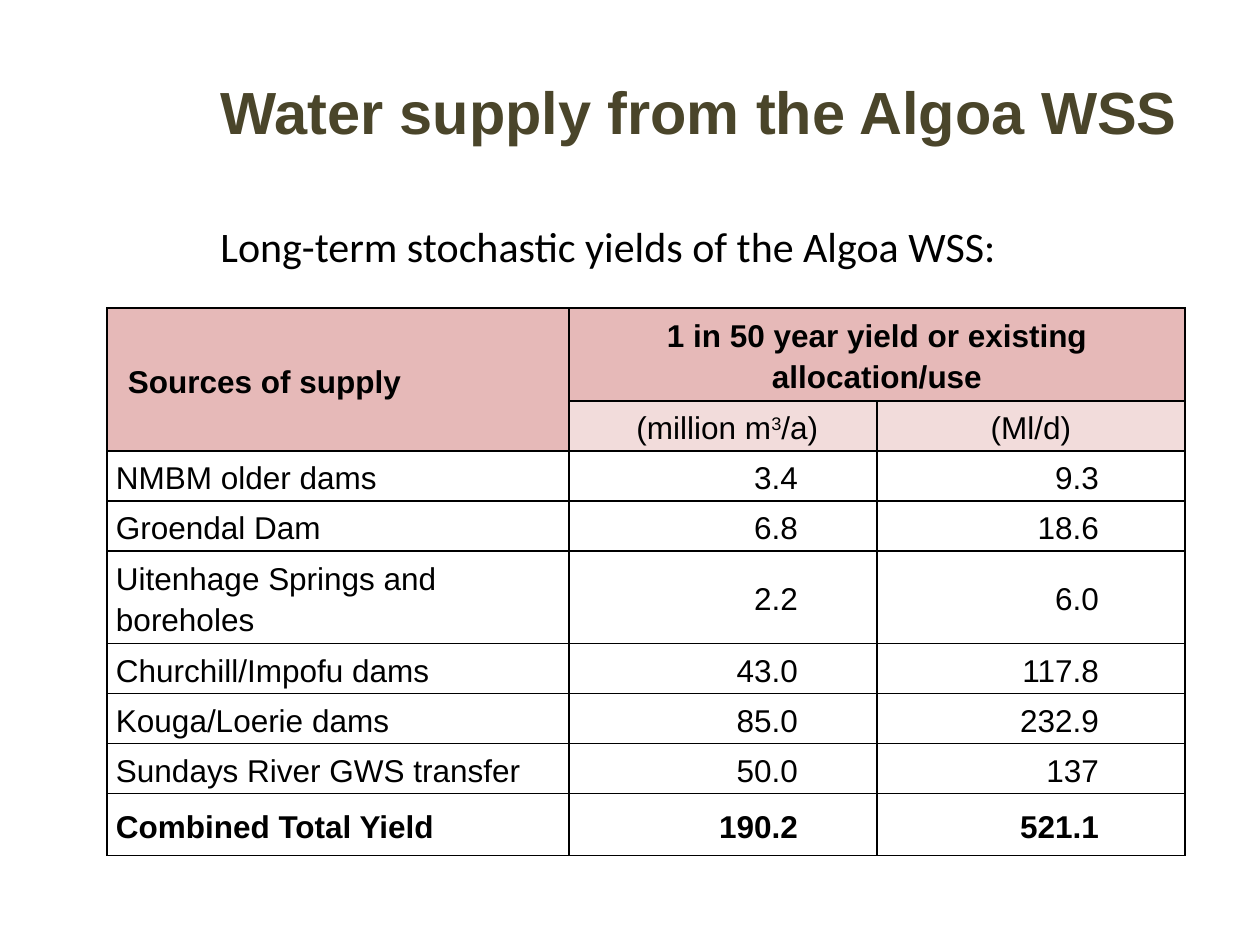
from dataclasses import dataclass
from lxml.etree import SubElement
from pptx import Presentation
from pptx.dml.color import RGBColor
from pptx.enum.text import MSO_ANCHOR, MSO_AUTO_SIZE, PP_ALIGN
from pptx.oxml.ns import qn
from pptx.util import Emu, Pt

# Content: text runs are strings, raised runs come as ("up", text)
TITLE = "Water supply from the Algoa WSS"
LEAD = "Long-term stochastic yields of the Algoa WSS:"
HEAD = ["Sources of supply", "1 in 50 year yield or existing allocation/use"]
UNITS = [[" (million m", ("up", "3"), "/a)"], ["(Ml/d)"]]
YIELDS = [
    ("NMBM older dams", "3.4", "9.3"),
    ("Groendal Dam", "6.8", "18.6"),
    ("Uitenhage Springs and boreholes", "2.2", "6.0"),
    ("Churchill/Impofu dams", "43.0", "117.8"),
    ("Kouga/Loerie dams", "85.0", "232.9"),
    ("Sundays River GWS transfer", "50.0", "137"),
    ("Combined Total Yield", "190.2", "521.1"),
]

# Layout in px
SIZE = (1260, 945)
TITLE_BOX = (208, 69, 1023, 84)
LEAD_BOX = (208, 202, 976, 77)
TABLE_AT = (107, 308)
COLS = [462, 308, 308]
ROW, TALL, LAST = 50, 92, 62
ROWS = [TALL, ROW, ROW, ROW, TALL, ROW, ROW, ROW, LAST]
PAD = {"margin_left": 9, "margin_right": 9, "margin_top": 3, "margin_bottom": 3}
HEAD_IN = 12
VALUE_IN = [0, 70, 77]


@dataclass
class Theme:
    ink: str = "000000"
    title: str = "4A452A"
    head: str = "E6B9B8"
    unit: str = "F2DCDB"
    body: str = "FFFFFF"
    sans: str = "Arial"
    text: str = "Calibri"
    title_pt: int = 34
    lead_pt: int = 24
    cell_pt: int = 18


LOOK = Theme()


def px(n):
    return Emu(n * 914400 // 126)


def put(item, values):
    for name, value in values.items():
        setattr(item, name, value)


def place(shape, box):
    put(shape, dict(zip(("left", "top", "width", "height"), map(px, box))))


def write(frame, runs, face, size, color, bold=False, **form):
    para = frame.paragraphs[0]
    put(para, form)
    for part in runs:
        up = isinstance(part, tuple)
        run = para.add_run()
        run.text = part[1] if up else part
        put(run.font, {"name": face, "size": Pt(size), "bold": bold})
        run.font.color.rgb = RGBColor.from_string(color)
        if up:
            run.font._element.set("baseline", "30000")
    return para


def border(cell):
    props = cell._tc.get_or_add_tcPr()
    for i, side in enumerate(("lnL", "lnR", "lnT", "lnB")):
        line = props.makeelement(qn(f"a:{side}"), {"w": str(Pt(1))})
        fill = SubElement(line, qn("a:solidFill"))
        SubElement(fill, qn("a:srgbClr"), val=LOOK.ink)
        props.insert(i, line)


def fill_cell(cell, runs, align, bold=False, left=0, right=0):
    para = write(cell.text_frame, runs, LOOK.sans, LOOK.cell_pt, LOOK.ink,
                 bold, alignment=align, line_spacing=1.15)
    props = para._p.get_or_add_pPr()
    for name, gap in (("marL", left), ("marR", right)):
        if gap:
            props.set(name, str(px(gap)))


def add_yields(slide):
    wide, high = sum(COLS), sum(ROWS)
    box = map(px, (*TABLE_AT, wide, high))
    table = slide.shapes.add_table(len(ROWS), len(COLS), *box).table
    put(table, {"first_row": False, "horz_banding": False})
    for col, size in zip(table.columns, COLS):
        col.width = px(size)
    for row, size in zip(table.rows, ROWS):
        row.height = px(size)

    # Fills, margins and borders
    for r, row in enumerate(table.rows):
        for c, cell in enumerate(row.cells):
            put(cell, {name: px(n) for name, n in PAD.items()})
            cell.vertical_anchor = MSO_ANCHOR.MIDDLE
            tint = LOOK.body if r > 1 else LOOK.unit if r and c else LOOK.head
            cell.fill.solid()
            cell.fill.fore_color.rgb = RGBColor.from_string(tint)
            border(cell)

    # Heading rows
    table.cell(0, 0).merge(table.cell(1, 0))
    table.cell(0, 1).merge(table.cell(0, 2))
    fill_cell(table.cell(0, 0), HEAD[:1], PP_ALIGN.LEFT, True, left=HEAD_IN)
    fill_cell(table.cell(0, 1), HEAD[1:], PP_ALIGN.CENTER, True)
    for c, runs in enumerate(UNITS, 1):
        fill_cell(table.cell(1, c), runs, PP_ALIGN.CENTER)

    # Yield rows, the total in bold
    for r, row in enumerate(YIELDS, 2):
        for c, text in enumerate(row):
            align = PP_ALIGN.RIGHT if c else PP_ALIGN.LEFT
            fill_cell(table.cell(r, c), [text], align, row is YIELDS[-1],
                      right=VALUE_IN[c])


def main():
    deck = Presentation()
    deck.slide_width, deck.slide_height = map(px, SIZE)
    slide = deck.slides.add_slide(deck.slide_layouts[5])
    frame = {"word_wrap": True, "vertical_anchor": MSO_ANCHOR.TOP,
             "auto_size": MSO_AUTO_SIZE.SHAPE_TO_FIT_TEXT}

    # Title
    title = slide.shapes.title
    place(title, TITLE_BOX)
    put(title.text_frame, frame)
    write(title.text_frame, [TITLE], LOOK.sans, LOOK.title_pt, LOOK.title,
          True, alignment=PP_ALIGN.LEFT)

    # Lead line
    lead = slide.shapes.add_textbox(*map(px, LEAD_BOX))
    put(lead.text_frame, frame)
    write(lead.text_frame, [LEAD], LOOK.text, LOOK.lead_pt, LOOK.ink,
          line_spacing=1.25)

    add_yields(slide)
    deck.save("out.pptx")


if __name__ == "__main__":
    main()
